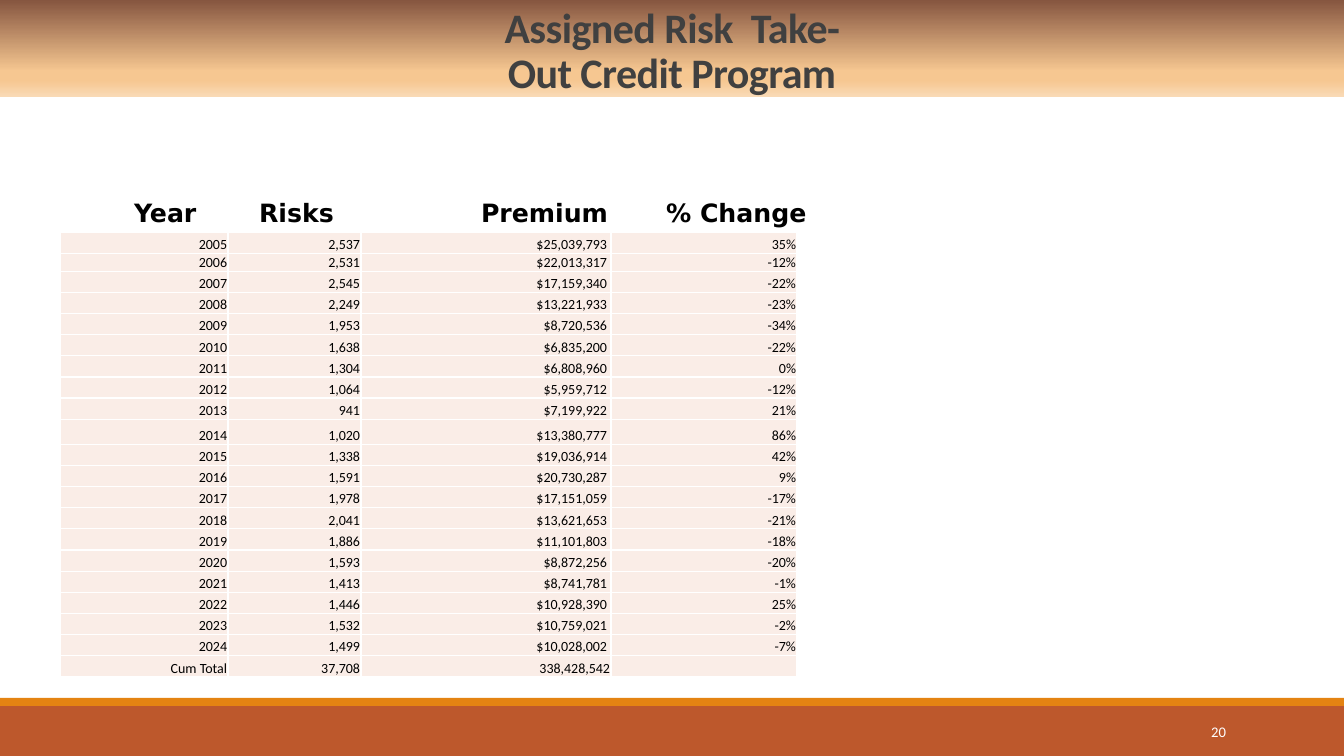
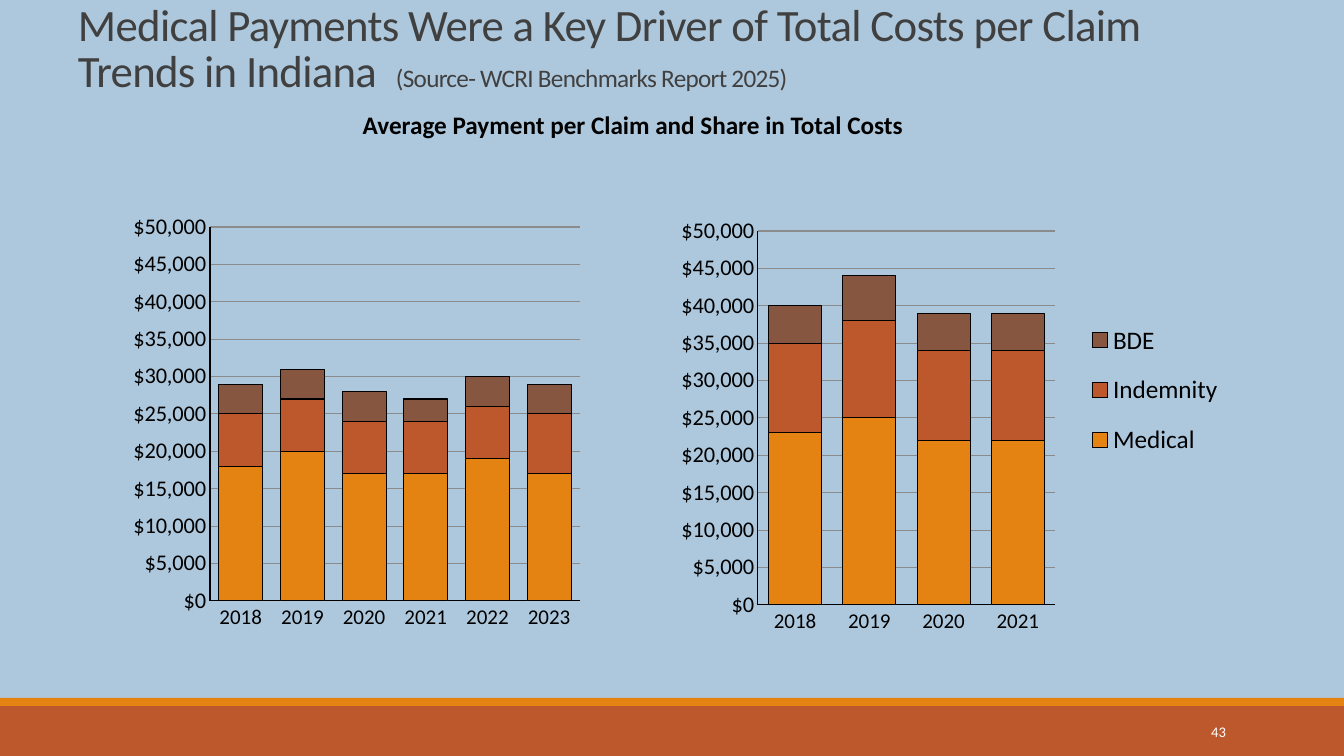
from collections import namedtuple
from dataclasses import dataclass

from pptx import Presentation
from pptx.chart.data import CategoryChartData
from pptx.dml.color import RGBColor
from pptx.enum.chart import XL_CHART_TYPE as ChartType, XL_LEGEND_POSITION as LegendPosition
from pptx.enum.chart import XL_TICK_MARK as TickMark
from pptx.enum.shapes import MSO_SHAPE as Preset
from pptx.enum.text import MSO_ANCHOR as Anchor, MSO_AUTO_SIZE as AutoSize, PP_ALIGN as Align
from pptx.oxml import parse_xml
from pptx.oxml.ns import nsdecls, qn
from pptx.util import Emu, Pt

Box = namedtuple("Box", "x y w h")
SLIDE = Box(0, 0, 1344, 756)
EMU_PER_PX = 12192000 / SLIDE.w


@dataclass(frozen=True)
class Theme:
    """Colours, fonts and type sizes of the deck."""
    font: str = "Calibri"
    heading_font: str = "DejaVu Sans"
    ink: str = "000000"
    title_ink: str = "404040"
    paper: str = "FFFFFF"
    sky: str = "ADC8DD"
    cell: str = "FAEDE7"
    grid: str = "8B8B8B"
    orange: str = "E48312"
    rust: str = "BD582C"
    brown: str = "865640"
    title_fade: tuple = ((0, "865640"), (74, "F6C791"), (83, "F6C791"), (100, "F9DAB6"))
    banner_size: float = 30
    title_size: float = 32
    text_size: float = 18
    value_size: float = 16
    category_size: float = 15
    number_size: float = 10.5
    cell_size: float = 10


THEME = Theme()

CREDIT_HEADINGS = "Year\tRisks\tPremium\t% Change"
CREDIT_ROWS = [
    ("2005", "2,537", "$25,039,793", "35%"),
    ("2006", "2,531", "$22,013,317", "-12%"),
    ("2007", "2,545", "$17,159,340", "-22%"),
    ("2008", "2,249", "$13,221,933", "-23%"),
    ("2009", "1,953", "$8,720,536", "-34%"),
    ("2010", "1,638", "$6,835,200", "-22%"),
    ("2011", "1,304", "$6,808,960", "0%"),
    ("2012", "1,064", "$5,959,712", "-12%"),
    ("2013", "941", "$7,199,922", "21%"),
    ("2014", "1,020", "$13,380,777", "86%"),
    ("2015", "1,338", "$19,036,914", "42%"),
    ("2016", "1,591", "$20,730,287", "9%"),
    ("2017", "1,978", "$17,151,059", "-17%"),
    ("2018", "2,041", "$13,621,653", "-21%"),
    ("2019", "1,886", "$11,101,803", "-18%"),
    ("2020", "1,593", "$8,872,256", "-20%"),
    ("2021", "1,413", "$8,741,781", "-1%"),
    ("2022", "1,446", "$10,928,390", "25%"),
    ("2023", "1,532", "$10,759,021", "-2%"),
    ("2024", "1,499", "$10,028,002", "-7%"),
    ("Cum Total", "37,708", "338,428,542", ""),
]
COST_PARTS = (("Medical", THEME.orange), ("Indemnity", THEME.rust), ("BDE", THEME.brown))
ALL_CLAIMS = {
    "2018": (18000, 7000, 4000),
    "2019": (20000, 7000, 4000),
    "2020": (17000, 7000, 4000),
    "2021": (17000, 7000, 3000),
    "2022": (19000, 7000, 4000),
    "2023": (17000, 8000, 4000),
}
MATURE_CLAIMS = {
    "2018": (23000, 12000, 5000),
    "2019": (25000, 13000, 6000),
    "2020": (22000, 12000, 5000),
    "2021": (22000, 12000, 5000),
}


def px(length):
    """Turn pixels into EMU."""
    return Emu(round(length * EMU_PER_PX))


def emu(box):
    """Turn a pixel box into EMU lengths."""
    return [px(length) for length in box]


def style(font, size=None, color=THEME.ink, bold=False, name=THEME.font, spacing=None):
    """Set the face, size, colour and letter spacing of a font."""
    font.name, font.bold = name, bold
    font.color.rgb = RGBColor.from_string(color)
    if size:
        font.size = Pt(size)
    if spacing:
        font._rPr.set("spc", str(round(spacing * 100)))


def paint(fill, color):
    """Give a fill one solid colour."""
    fill.solid()
    fill.fore_color.rgb = RGBColor.from_string(color)


def rule(line, color, width=0.75):
    """Give a line a colour and a width in points."""
    line.color.rgb = RGBColor.from_string(color)
    line.width = Pt(width)


def frame_text(frame, anchor, insets):
    """Wrap a text frame, anchor it and set its side and end insets."""
    frame.word_wrap = True
    frame.auto_size = AutoSize.NONE
    frame.vertical_anchor = anchor
    frame.margin_left = frame.margin_right = px(insets[0])
    frame.margin_top = frame.margin_bottom = px(insets[1])
    return frame.paragraphs[0]


def add_label(slide, box, text, anchor=Anchor.TOP, align=Align.LEFT, insets=(10, 5), tabs=(), **font):
    """Add one styled paragraph in a text box, with optional tab stops."""
    label = frame_text(slide.shapes.add_textbox(*emu(box)).text_frame, anchor, insets)
    label.text, label.alignment = text, align
    if tabs:
        stops = "".join(f'<a:tab pos="{px(stop)}" algn="l"/>' for stop in tabs)
        label._p.get_or_add_pPr().append(parse_xml(f'<a:tabLst {nsdecls("a")}>{stops}</a:tabLst>'))
    style(label.font, **font)


def place_title(slide, box, anchor, insets):
    """Move the title placeholder to a box and return its paragraph."""
    title = slide.shapes.title
    title.left, title.top, title.width, title.height = emu(box)
    return frame_text(title.text_frame, anchor, insets)


def add_master_bands(master, slide):
    """Put the two bottom bands on the master, behind its placeholders."""
    bands = ((Box(0, 706, SLIDE.w, 50), THEME.rust), (Box(0, 698, SLIDE.w, 8), THEME.orange))
    for place, (box, color) in enumerate(bands, start=2):
        band = slide.shapes.add_shape(Preset.RECTANGLE, *emu(box))
        band.shadow.inherit = False
        paint(band.fill, color)
        band.line.fill.background()
        master.shapes.element.insert(place, band._element)


def add_page(deck, color, number):
    """Add a titled slide with its background and slide number."""
    slide = deck.slides.add_slide(deck.slide_layouts[5])
    paint(slide.background.fill, color)
    add_label(slide, Box(1092, 712, 144, 40), number, Anchor.MIDDLE, Align.RIGHT,
              size=THEME.number_size, color=THEME.paper)
    return slide


def add_banner(slide, box, text):
    """Set the title as a centred heading on a fading banner."""
    heading = place_title(slide, box, Anchor.BOTTOM, (486, 0))
    heading.text, heading.alignment, heading.line_spacing = text, Align.CENTER, Pt(32.4)
    style(heading.font, THEME.banner_size, THEME.title_ink, bold=True, spacing=-0.4)
    stops = "".join(f'<a:gs pos="{place * 1000}"><a:srgbClr val="{color}"/></a:gs>'
                    for place, color in THEME.title_fade)
    slide.shapes.title._element.spPr.append(parse_xml(
        f'<a:gradFill {nsdecls("a")} rotWithShape="1"><a:gsLst>{stops}</a:gsLst>'
        '<a:lin ang="5400000" scaled="0"/></a:gradFill>'))


def add_credit_table(slide, box):
    """Add the yearly credits, with one narrow and one tall row."""
    columns = (168, 133, 250, 186)
    special = {1: 17, 9: 25}
    regular = (box.h - sum(special.values())) / (len(CREDIT_ROWS) - len(special))
    credits = slide.shapes.add_table(len(CREDIT_ROWS), len(columns), *emu(box)).table
    credits.first_row = credits.horz_banding = False
    for column, width in zip(credits.columns, columns):
        column.width = px(width)
    for index, (row, values) in enumerate(zip(credits.rows, CREDIT_ROWS)):
        row.height = px(special.get(index, regular))
        for cell, value in zip(row.cells, values):
            paint(cell.fill, THEME.cell)
            cell.vertical_anchor = Anchor.BOTTOM
            cell.margin_left = cell.margin_top = px(1)
            cell.margin_right = px(4 if value.startswith("$") else 1)
            cell.margin_bottom = 0
            entry = cell.text_frame.paragraphs[0]
            entry.text, entry.alignment = value, Align.RIGHT
            style(entry.font, THEME.cell_size)


def manual_layout(part, whole, target=""):
    """Build a chart layout that places a part within the whole chart box."""
    shares = {"x": (part.x - whole.x) / whole.w, "y": (part.y - whole.y) / whole.h,
              "w": part.w / whole.w, "h": part.h / whole.h}
    sizes = "".join(f'<c:{key} val="{share:.4f}"/>' for key, share in shares.items())
    return parse_xml(f'<c:layout {nsdecls("c")}><c:manualLayout>{target}<c:xMode val="edge"/>'
                     f'<c:yMode val="edge"/>{sizes}</c:manualLayout></c:layout>')


def add_cost_chart(slide, box, plot_box, costs, legend_box=None):
    """Add stacked columns of the cost parts per year."""
    data = CategoryChartData(number_format='"$"#,##0')
    data.categories = list(costs)
    for (name, _), values in zip(COST_PARTS, zip(*costs.values())):
        data.add_series(name, values)
    chart = slide.shapes.add_chart(ChartType.COLUMN_STACKED, *emu(box), data).chart
    chart.has_title = False
    style(chart.font, THEME.text_size)

    columns = chart.plots[0]
    columns.gap_width, columns.overlap, columns.vary_by_categories = 40, 100, False
    for series, (_, color) in zip(columns.series, COST_PARTS):
        paint(series.format.fill, color)
        rule(series.format.line, THEME.ink)

    years, dollars = chart.category_axis, chart.value_axis
    for axis, size in ((years, THEME.category_size), (dollars, THEME.value_size)):
        axis.major_tick_mark = axis.minor_tick_mark = TickMark.NONE
        style(axis.tick_labels.font, size)
        rule(axis.format.line, THEME.ink)
    dollars.minimum_scale, dollars.maximum_scale, dollars.major_unit = 0, 50000, 5000
    dollars.tick_labels.number_format = '"$"#,##0'
    dollars.tick_labels.number_format_is_linked = False
    rule(dollars.major_gridlines.format.line, THEME.grid)

    plot_area = chart._chartSpace.chart.plotArea
    for automatic in plot_area.findall(qn("c:layout")):
        plot_area.remove(automatic)
    plot_area.insert(0, manual_layout(plot_box, box, '<c:layoutTarget val="inner"/>'))

    chart.has_legend = legend_box is not None
    if legend_box:
        chart.legend.position = LegendPosition.RIGHT
        chart.legend.include_in_layout = False
        style(chart.legend.font, THEME.text_size)
        side = chart.legend._element.find(qn("c:legendPos"))
        side.addnext(manual_layout(legend_box, box))


def build_credit_slide(deck):
    """Build the slide of the credit program by year."""
    slide = add_page(deck, THEME.paper, "20")
    add_banner(slide, Box(0, 0, SLIDE.w, 97), "Assigned Risk  Take-Out Credit Program")
    add_label(slide, Box(134, 192, 780, 40), CREDIT_HEADINGS, insets=(0, 5), tabs=(125, 347, 532),
              size=THEME.text_size, bold=True, name=THEME.heading_font)
    add_credit_table(slide, Box(60, 232, 737, 444))
    return slide


def build_cost_slide(deck):
    """Build the slide of the costs per claim."""
    slide = add_page(deck, THEME.sky, "43")
    headline = place_title(slide, Box(68, 0, 1189, 108), Anchor.TOP, (10, 5))
    headline.alignment, headline.line_spacing = Align.LEFT, 0.85
    parts = (("Medical Payments Were a Key Driver of Total Costs per Claim Trends in Indiana  ",
              THEME.title_size), ("(Source- WCRI Benchmarks Report 2025)", THEME.text_size))
    for text, size in parts:
        run = headline.add_run()
        run.text, run.font.size = text, Pt(size)
    style(headline.font, color=THEME.title_ink, spacing=-0.5)
    add_label(slide, Box(261, 104, 744, 72), "Average Payment per Claim and Share in Total Costs",
              align=Align.CENTER, size=THEME.text_size, bold=True)
    add_cost_chart(slide, Box(114, 210, 531, 455), Box(210, 227, 370, 374), ALL_CLAIMS)
    add_cost_chart(slide, Box(651, 210, 580, 455), Box(758, 231, 297, 374), MATURE_CLAIMS,
                   Box(1085, 306, 140, 168))


def main():
    """Build and save the deck."""
    deck = Presentation()
    deck.slide_width, deck.slide_height = px(SLIDE.w), px(SLIDE.h)
    first = build_credit_slide(deck)
    add_master_bands(deck.slide_master, first)
    build_cost_slide(deck)
    deck.save("out.pptx")


if __name__ == "__main__":
    main()
